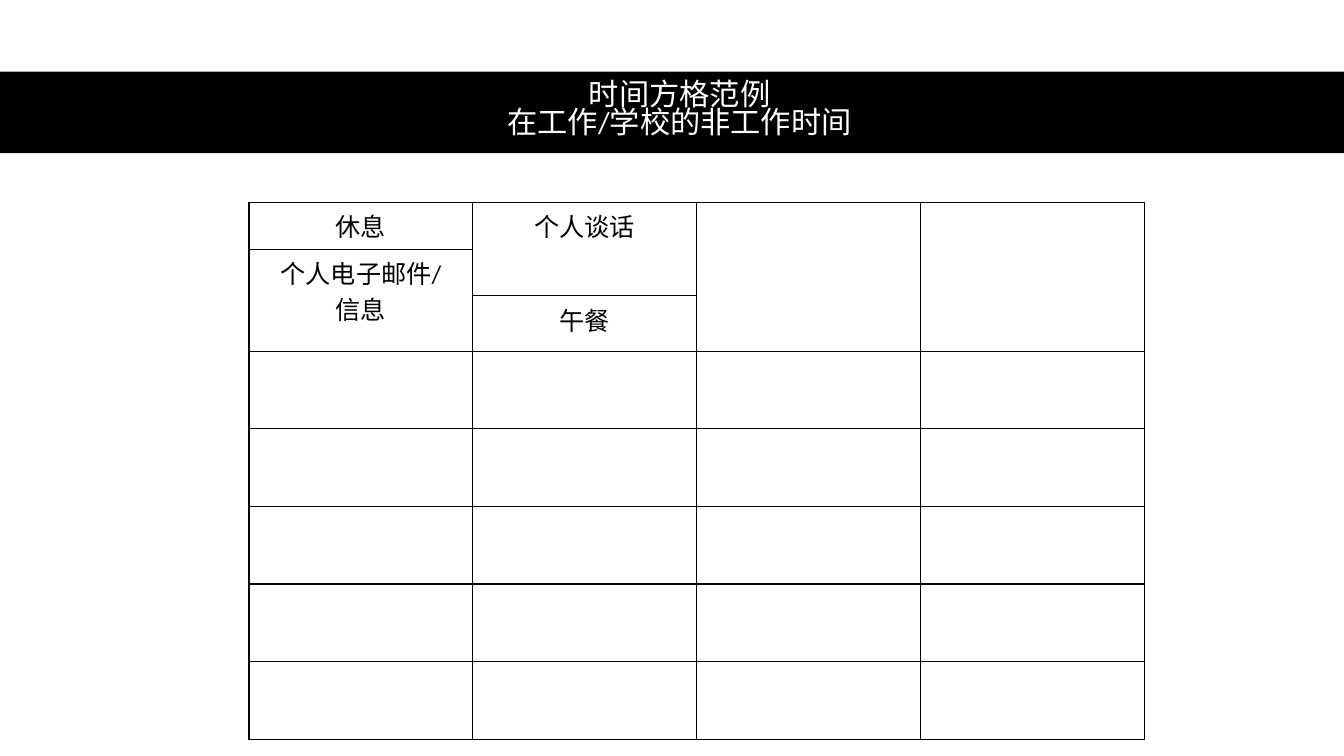
"""Build a slide with a time-grid table under a black title band."""
from itertools import product

from lxml.etree import SubElement
from pptx import Presentation
from pptx.dml.color import RGBColor
from pptx.enum.shapes import MSO_SHAPE as SHAPE
from pptx.enum.text import MSO_ANCHOR as ANCHOR, PP_ALIGN as ALIGN
from pptx.oxml.ns import qn
from pptx.util import Inches, Pt

COLORS = {"black": "000000", "white": "FFFFFF"}
COLUMNS = 4
COLUMN_WIDTH = 2.22
ROW_HEIGHTS = [0.46, 0.46, 0.55] + [0.77] * 5
MERGES = [((0, 1), (1, 1)), ((0, 2), (2, 2)), ((0, 3), (2, 3)), ((1, 0), (2, 0))]
ACTIVITIES = {
    (0, 0): "休息",
    (0, 1): "个人谈话",
    (1, 0): "个人电子邮件/\v信息",
    (2, 1): "午餐",
}


def write_text(tf, text, size, color, spacing=1.0):
    """Fill a text frame with one centred paragraph."""
    tf.text = text
    p = tf.paragraphs[0]
    p.alignment = ALIGN.CENTER
    p.line_spacing = spacing
    for r in p.runs:
        for name, value in {"name": "Calibri", "size": Pt(size), "bold": False}.items():
            setattr(r.font, name, value)
        r.font.color.rgb = RGBColor.from_string(COLORS[color])


def add_title(s, text):
    """Place the slide title over a full-width black band."""
    title = s.shapes.title
    band = s.shapes.add_shape(SHAPE.RECTANGLE, 0, Inches(0.71), Inches(13.33), Inches(0.81))
    band.shadow.inherit = False
    band.fill.solid()
    band.fill.fore_color.rgb = RGBColor.from_string(COLORS["black"])
    band.line.fill.background()
    title.element.addprevious(band.element)
    box = {"left": 0.61, "top": 0.7, "width": 12.26, "height": 0.81}
    for name, value in box.items():
        setattr(title, name, Inches(value))
    title.text_frame.word_wrap = True
    title.text_frame.vertical_anchor = ANCHOR.MIDDLE
    write_text(title.text_frame, text, 21.6, "white", 0.78)


def add_borders(cell):
    """Draw a thin black line on each side of a cell."""
    props = cell._tc.get_or_add_tcPr()
    for index, side in enumerate(("lnL", "lnR", "lnT", "lnB")):
        line = props.makeelement(qn(f"a:{side}"), {"w": str(Pt(1))})
        fill = SubElement(line, qn("a:solidFill"))
        SubElement(fill, qn("a:srgbClr"), val=COLORS["black"])
        props.insert(index, line)


def add_time_grid(s):
    """Add the table of time squares with its merged activity cells."""
    rows = len(ROW_HEIGHTS)
    frame = s.shapes.add_table(
        rows, COLUMNS, Inches(2.47), Inches(2.01),
        Inches(COLUMNS * COLUMN_WIDTH), Inches(sum(ROW_HEIGHTS)),
    )
    table = frame.table
    table.first_row = table.horz_banding = False
    for column in table.columns:
        column.width = Inches(COLUMN_WIDTH)
    for row, height in zip(table.rows, ROW_HEIGHTS):
        row.height = Inches(height)
    for start, end in MERGES:
        table.cell(*start).merge(table.cell(*end))
    for place in product(range(rows), range(COLUMNS)):
        cell = table.cell(*place)
        cell.fill.background()
        add_borders(cell)
        if place in ACTIVITIES:
            write_text(cell.text_frame, ACTIVITIES[place], 18, "black")


def main():
    """Create the slide and save it."""
    prs = Presentation()
    prs.slide_width, prs.slide_height = Inches(13.33), Inches(7.5)
    s = prs.slides.add_slide(prs.slide_layouts[5])
    add_title(s, "时间方格范例\v在工作/学校的非工作时间")
    add_time_grid(s)
    prs.save("out.pptx")


if __name__ == "__main__":
    main()
